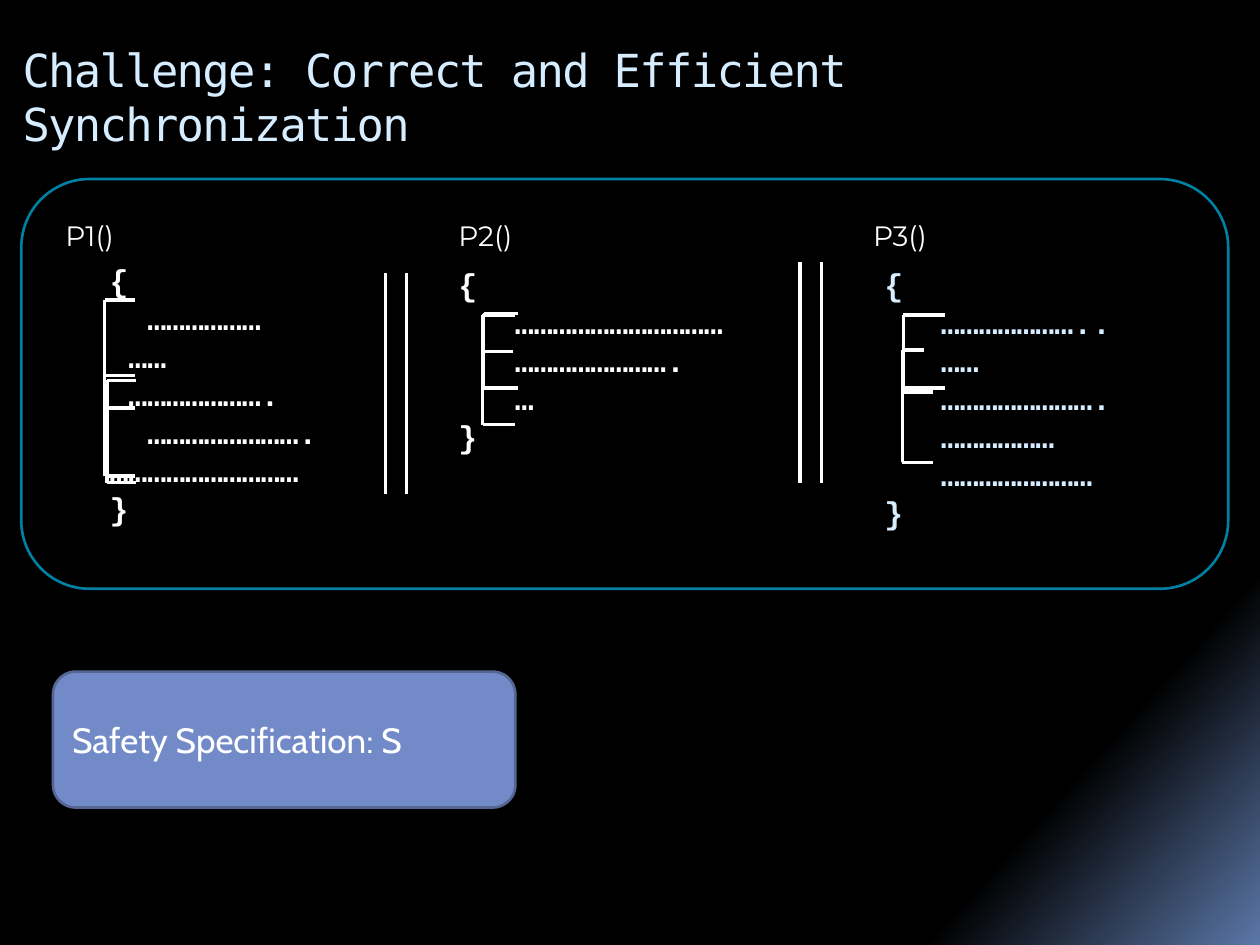
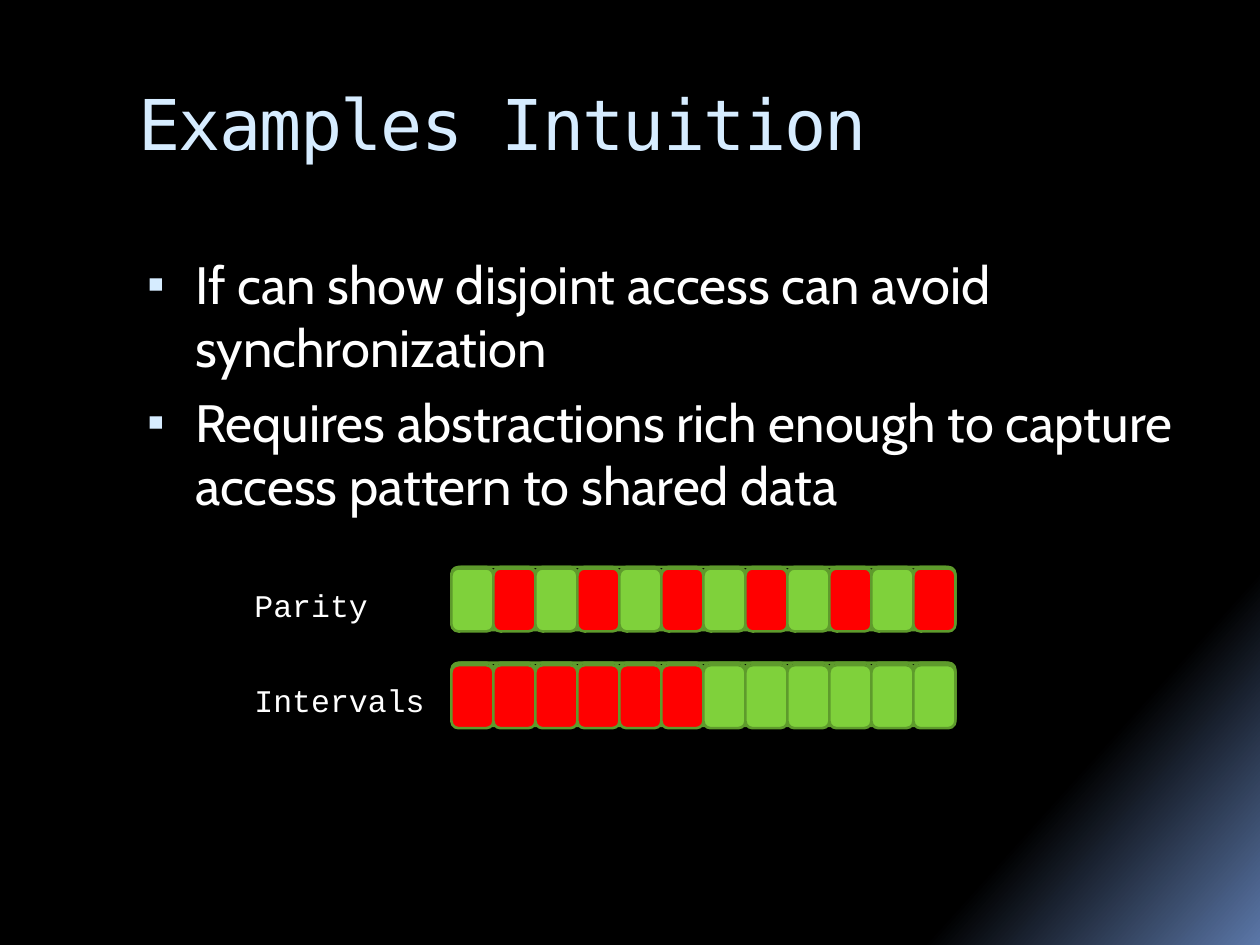
"""Build two slides on synchronization with one shared dark style."""
from lxml.etree import SubElement as Sub
from pptx import Presentation
from pptx.dml.color import RGBColor as RGB
from pptx.enum.shapes import MSO_CONNECTOR as Line, MSO_SHAPE as Form
from pptx.enum.text import MSO_ANCHOR as Anchor, MSO_AUTO_SIZE as Auto, PP_ALIGN as Align
from pptx.oxml.ns import qn
from pptx.util import Cm, Pt

HUES = {
    "black": "000000", "glow": "5B77A8", "white": "FFFFFF", "ice": "D6ECFF",
    "teal": "0080A3", "blue": "738AC8", "navy": "556694",
    "green": "7FD13B", "moss": "5E9B2C", "red": "FF0000",
}
FONTS = {
    "head": {"name": "DejaVu Sans Mono", "size": Pt(26)},
    "main": {"name": "DejaVu Sans Mono", "size": Pt(40)},
    "list": {"name": "Cabin", "size": Pt(30)},
    "note": {"name": "Cabin", "size": Pt(20)},
    "label": {"name": "Montserrat", "size": Pt(16)},
    "code": {"name": "Courier New", "size": Pt(18), "bold": True},
    "mono": {"name": "Courier New", "size": Pt(18)},
}
CHAR = 0.38
PITCH = Pt(21.7)


class Deck:
    def __init__(self):
        self.prs = Presentation()
        self.prs.slide_width, self.prs.slide_height = Cm(25.4), Cm(19.05)
        self.slide = None
        self.paint()

    def paint(self):
        master = self.prs.slide_master
        fill = master.background.fill
        fill.gradient()
        fill.gradient_angle = 318
        stops = next(master.element.iter(qn("a:gsLst")))
        for stop in list(stops):
            stops.remove(stop)
        for pos, hue in ((65, "black"), (84, "black"), (100, "glow")):
            stop = Sub(stops, qn("a:gs"), pos=str(pos * 1000))
            Sub(stop, qn("a:srgbClr"), val=HUES[hue])

    def start(self, layout):
        self.slide = self.prs.slides.add_slide(self.prs.slide_layouts[layout])

    def place(self, shape, box):
        for key, val in zip(("left", "top", "width", "height"), box):
            setattr(shape, key, Cm(val))

    def put(self, frame, rows, style, hue="white", anchor=Anchor.TOP):
        values = {"word_wrap": True, "auto_size": Auto.NONE, "vertical_anchor": anchor}
        for key, val in values.items():
            setattr(frame, key, val)
        for num, text in enumerate(rows):
            para = frame.paragraphs[0] if num == 0 else frame.add_paragraph()
            para.alignment = Align.LEFT
            run = para.add_run()
            run.text = text
            run.font.color.rgb = RGB.from_string(HUES[hue])
            for key, val in FONTS[style].items():
                setattr(run.font, key, val)

    def title(self, text, box, style):
        shape = self.slide.shapes.title
        self.place(shape, box)
        frame = shape.text_frame
        self.put(frame, [text], style, "ice")
        frame.margin_top = Cm(0.2)
        frame.paragraphs[0].runs[0].font._element.set("spc", "-100")

    def bullets(self, rows, box):
        shape = self.slide.placeholders[1]
        self.place(shape, box)
        self.put(shape.text_frame, rows, "list")
        for para in shape.text_frame.paragraphs:
            para.space_before = Pt(7)
            props = para._p.get_or_add_pPr()
            props.set("marL", str(Cm(1.14)))
            props.set("indent", str(Cm(-0.97)))
            Sub(Sub(props, qn("a:buClr")), qn("a:srgbClr"), val=HUES["ice"])
            Sub(props, qn("a:buSzPct"), val="95000")
            Sub(props, qn("a:buChar"), char="▪")

    def text(self, rows, box, style, hue="white", anchor=Anchor.TOP):
        shape = self.slide.shapes.add_textbox(*map(Cm, box))
        self.put(shape.text_frame, rows, style, hue, anchor)
        return shape.text_frame

    def code(self, rows, box, style="code", hue="white"):
        frame = self.text([text for _, text in rows], box, style, hue)
        for para, (chars, _) in zip(frame.paragraphs, rows):
            para.line_spacing = PITCH
            para._p.get_or_add_pPr().set("marL", str(Cm(CHAR * chars)))

    def panel(self, box, edge, fill=None):
        shape = self.slide.shapes.add_shape(Form.ROUNDED_RECTANGLE, *map(Cm, box))
        shape.shadow.inherit = False
        shape.line.color.rgb = RGB.from_string(HUES[edge])
        shape.line.width = Pt(1.5)
        if fill:
            shape.fill.solid()
            shape.fill.fore_color.rgb = RGB.from_string(HUES[fill])
        else:
            shape.fill.background()
        return shape

    def line(self, *ends):
        wire = self.slide.shapes.add_connector(Line.STRAIGHT, *map(Cm, ends))
        wire.line.color.rgb = RGB.from_string(HUES["white"])
        wire.line.width = Pt(2)
        Sub(wire._element.spPr, qn("a:effectLst"))

    def bracket(self, left, top, low, arm):
        self.line(left, low, left, top)
        for y in (top, low):
            self.line(left, y, left + arm, y)

    def strip(self, top, drop, fills):
        left, width, high = 9.1, 10.16, 1.27
        step = width / len(fills)
        self.panel((left, top, width, high), "moss")
        for y, hues in ((top, [None] * len(fills)), (top + drop, fills)):
            for num, hue in enumerate(hues):
                self.panel((left + num * step, y, step, high), "moss", hue)


def challenge(deck):
    deck.start(5)
    for mark in (
        (9.75, 6.32, 7.82, 0.69), (18.21, 6.35, 7.82, 0.84), (2.11, 6.05, 8.23, 0.61),
        (18.19, 7.06, 9.32, 0.43), (9.73, 6.35, 8.56, 0.66), (18.19, 7.9, 9.32, 0.61),
        (9.73, 7.09, 8.56, 0.61), (2.16, 7.67, 9.73, 0.58), (2.11, 7.57, 9.6, 0.61),
    ):
        deck.bracket(*mark)
    deck.title("Challenge: Correct and Efficient Synchronization",
               (0.2, 0.64, 24.94, 3.18), "head")
    deck.panel((0.43, 3.61, 24.33, 8.26), "teal")
    deck.code([(0, "{"), (2, "………………"), (1, "……"), (1, "…………………."),
               (2, "……………………."), (0, "…………………………"), (0, "}")],
              (1.96, 5.13, 5.89, 5.64))
    deck.code([(0, "{"), (3, "……………………………"), (3, "……………………."),
               (3, "…"), (0, "}")], (8.99, 5.21, 6.35, 4.06))
    deck.code([(0, "{"), (3, "………………….."), (3, "……"), (3, "……………………."),
               (3, "………………"), (3, "……………………"), (0, "}")],
              (17.58, 5.21, 6.15, 5.59), hue="ice")
    for name, left in (("P1()", 1.07), ("P2()", 8.99), ("P3()", 17.35)):
        deck.text([name], (left, 4.01, 4.24, 1.47), "label", anchor=Anchor.MIDDLE)
    for left, top in ((7.77, 5.51), (16.13, 5.28)):
        for x in (left, left + 0.43):
            deck.line(x, top, x, top + 4.45)
    safety = deck.panel((1.07, 13.54, 9.32, 2.74), "navy", "blue")
    deck.put(safety.text_frame, ["Safety Specification: S"], "note", anchor=Anchor.MIDDLE)


def examples(deck):
    deck.start(1)
    deck.title("Examples Intuition", (2.54, 1.42, 21.59, 2.54), "main")
    deck.bullets(["If can show disjoint access can avoid synchronization",
                  "Requires abstractions rich enough to capture access pattern to shared data"],
                 (2.54, 4.95, 21.59, 5.64))
    for name, top, drop, fills in (
        ("Parity", 11.43, 0.03, ["green", "red"] * 6),
        ("Intervals", 13.36, 0.05, ["red"] * 6 + ["green"] * 6),
    ):
        deck.code([(0, name)], (4.88, top + 0.25, 4.1, 1.02), "mono")
        deck.strip(top, drop, fills)


def main():
    deck = Deck()
    challenge(deck)
    examples(deck)
    deck.prs.save("out.pptx")


if __name__ == "__main__":
    main()
